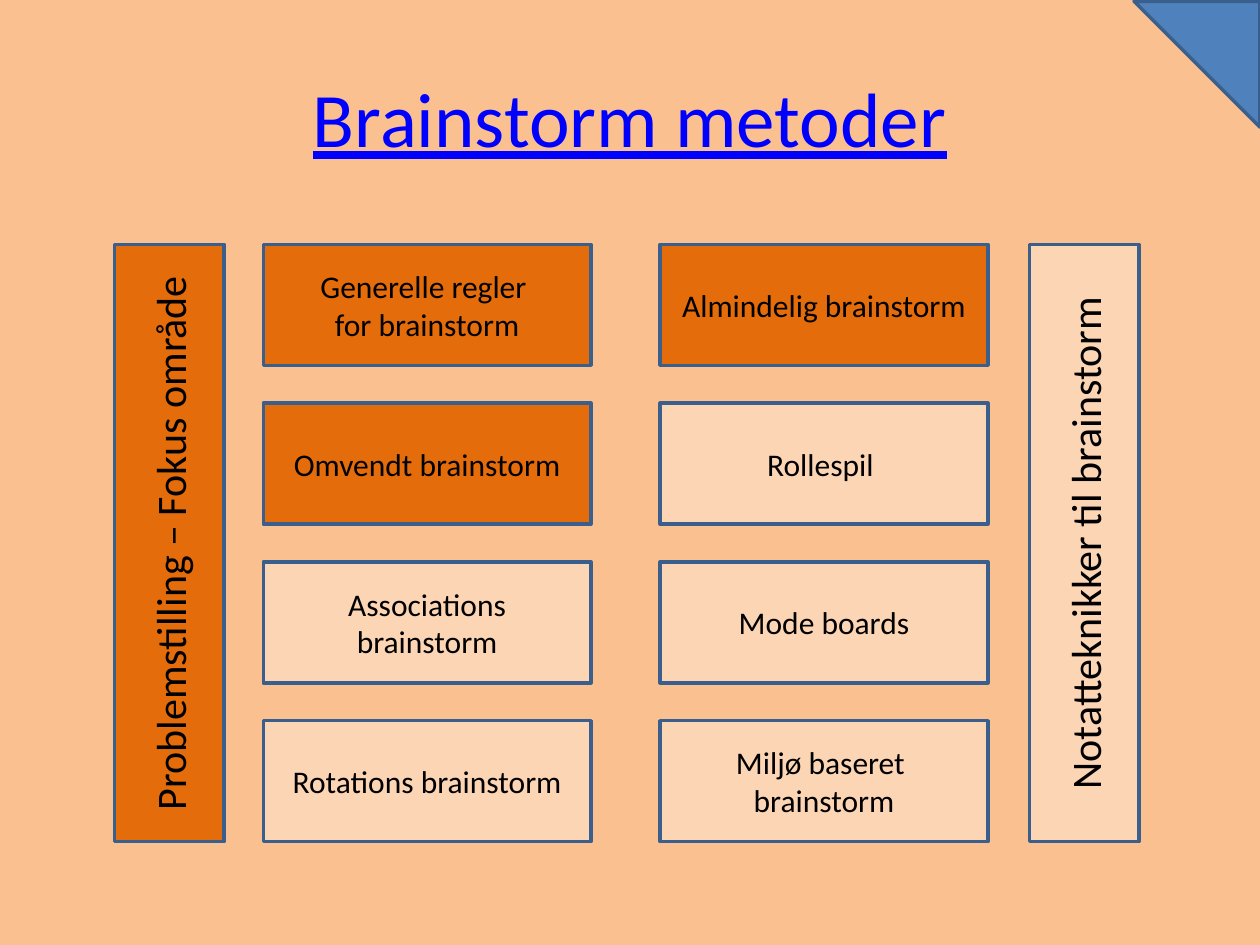
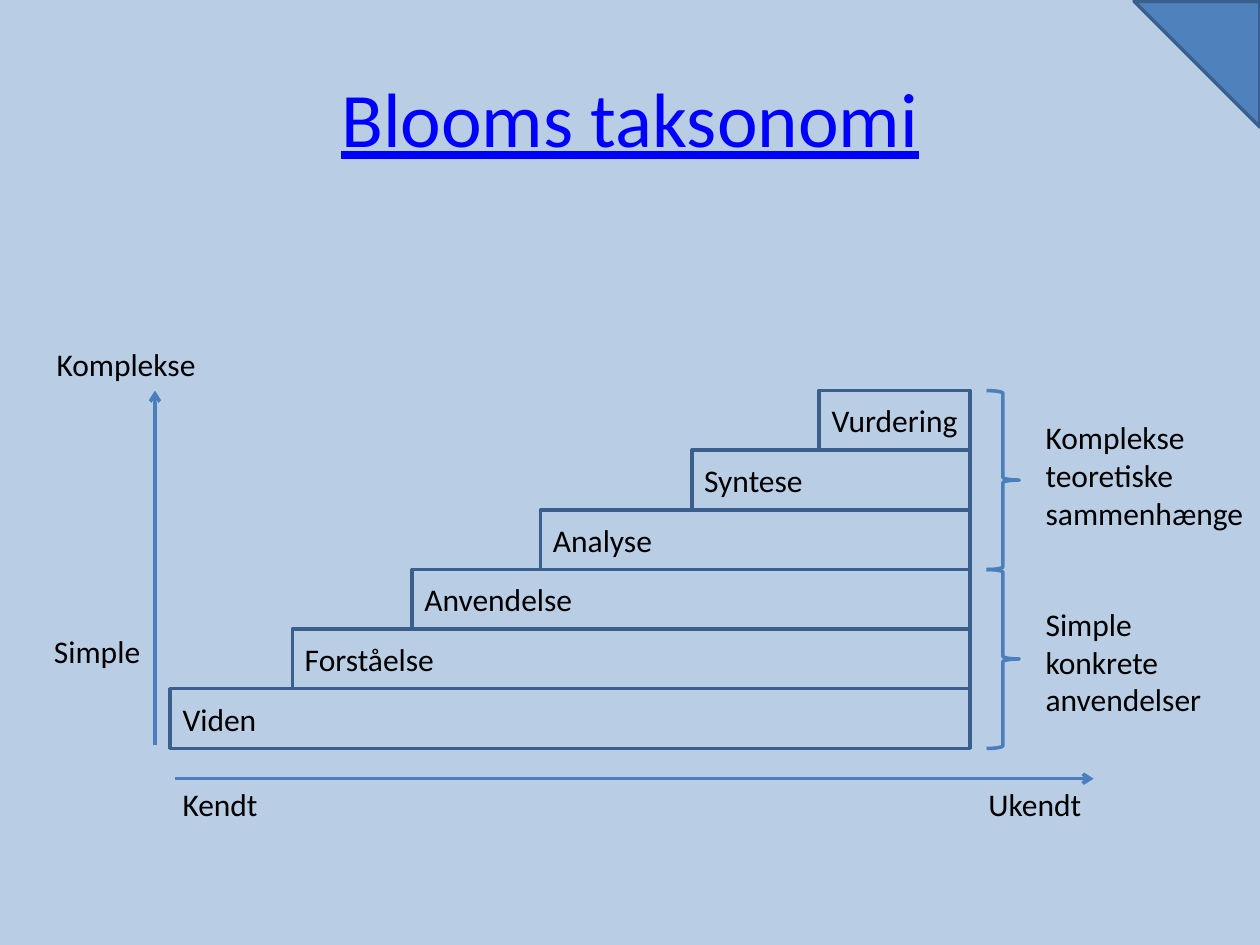
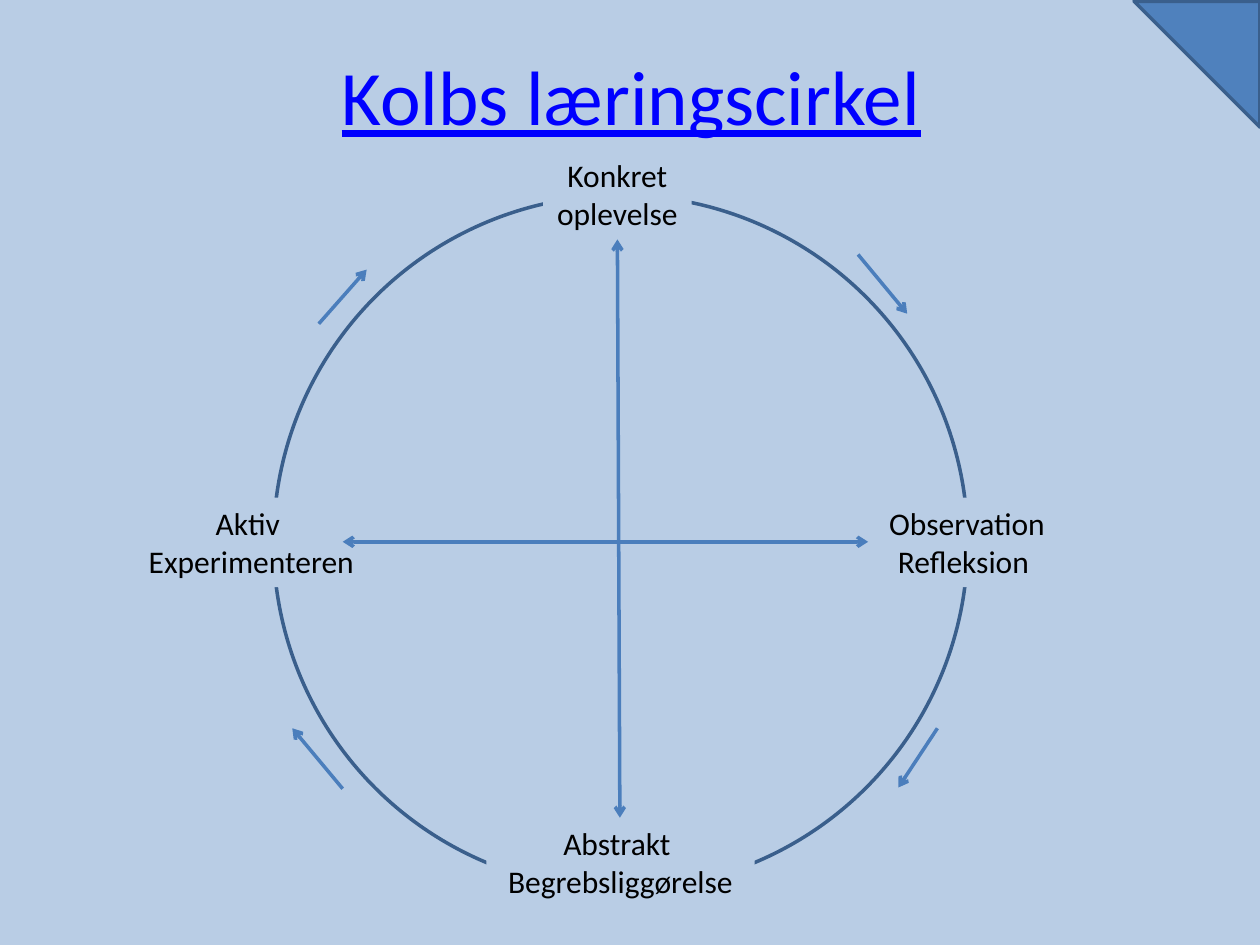
from dataclasses import dataclass

from lxml.etree import SubElement
from pptx import Presentation
from pptx.dml.color import RGBColor
from pptx.enum.shapes import MSO_CONNECTOR, MSO_SHAPE as Shape
from pptx.enum.text import MSO_ANCHOR as Anchor, MSO_AUTO_SIZE as AutoSize, PP_ALIGN as Align
from pptx.oxml.ns import qn
from pptx.util import Inches, Pt


@dataclass(frozen=True)
class Theme:
    font: str = "Calibri"
    title_size: int = 44
    banner_size: int = 24
    body_size: int = 18
    line_width: int = 2
    text: str = "000000"
    title: str = "0000FF"
    outline: str = "3A5F8C"
    arrow: str = "4B7EBC"
    corner: str = "4F81BD"
    peach: str = "FAC090"
    blue: str = "B9CDE5"
    strong_box: str = "E46C0A"
    pale_box: str = "FCD5B5"


THEME = Theme()


def write_text(frame, text, size=THEME.body_size, color=THEME.text, align=Align.CENTER,
               anchor=Anchor.MIDDLE, underline=None, wrap=True):
    """Fill the frame with one paragraph for each line of the text."""
    frame.word_wrap = wrap
    frame.vertical_anchor = anchor
    for index, line in enumerate(text.split("\n")):
        para = frame.paragraphs[0] if index == 0 else frame.add_paragraph()
        para.alignment = align
        span = para.add_run()
        span.text = line
        span.font.name = THEME.font
        span.font.size = Pt(size)
        span.font.underline = underline
        span.font.color.rgb = RGBColor.from_string(color)


def add_figure(page, kind, left, top, width, height, fill=None, line=THEME.outline):
    figure = page.shapes.add_shape(kind, Inches(left), Inches(top), Inches(width), Inches(height))
    figure.shadow.inherit = False
    if fill:
        figure.fill.solid()
        figure.fill.fore_color.rgb = RGBColor.from_string(fill)
    else:
        figure.fill.background()
    if line:
        figure.line.color.rgb = RGBColor.from_string(line)
        figure.line.width = Pt(THEME.line_width)
    else:
        figure.line.fill.background()
    return figure


def add_box(page, text, left, top, width, height, fill, line=THEME.outline, **text_format):
    box = add_figure(page, Shape.RECTANGLE, left, top, width, height, fill, line)
    write_text(box.text_frame, text, **text_format)
    return box


def add_banner(page, text, left, top, height, fill):
    """Add a tall box whose text reads upwards."""
    banner = add_box(page, text, left, top, 0.87, height, fill, size=THEME.banner_size)
    banner.element.txBody.bodyPr.set("vert", "vert270")


def add_label(page, text, left, top, width, height=0.4, align=Align.LEFT):
    label = page.shapes.add_textbox(Inches(left), Inches(top), Inches(width), Inches(height))
    write_text(label.text_frame, text, align=align, anchor=Anchor.TOP, wrap=False)
    label.text_frame.auto_size = AutoSize.SHAPE_TO_FIT_TEXT


def add_arrow(page, start, end, both_ends=False):
    points = [Inches(value) for value in (*start, *end)]
    arrow = page.shapes.add_connector(MSO_CONNECTOR.STRAIGHT, *points)
    arrow.line.color.rgb = RGBColor.from_string(THEME.arrow)
    arrow.line.width = Pt(THEME.line_width)
    properties = arrow.element.spPr
    outline = properties.find(qn("a:ln"))
    for tag in ("a:headEnd", "a:tailEnd") if both_ends else ("a:tailEnd",):
        SubElement(outline, qn(tag), type="arrow")
    SubElement(properties, qn("a:effectLst"))


def add_page(deck, title, background, title_left=0.5, title_top=0.3):
    """Add a slide with its background, title and corner triangle."""
    page = deck.slides.add_slide(deck.slide_layouts[5])
    page.background.fill.solid()
    page.background.fill.fore_color.rgb = RGBColor.from_string(background)
    heading = page.shapes.title
    heading.left, heading.top = Inches(title_left), Inches(title_top)
    heading.width, heading.height = Inches(9), Inches(1.25)
    write_text(heading.text_frame, title, size=THEME.title_size, color=THEME.title, underline=True)
    corner = add_figure(page, Shape.RIGHT_TRIANGLE, 9, 0.01, 1, 1, THEME.corner)
    corner.rotation = 180
    return page


def build_methods(deck):
    page = add_page(deck, "Brainstorm metoder", THEME.peach)
    top, box_height, row_pitch = 1.94, 0.96, 1.26
    strong, pale = THEME.strong_box, THEME.pale_box
    columns = {
        2.09: [("Generelle regler \nfor brainstorm", strong), ("Omvendt brainstorm", strong),
               ("Associations brainstorm", pale), ("Rotations brainstorm", pale)],
        5.24: [("Almindelig brainstorm", strong), ("Rollespil ", pale),
               ("Mode boards", pale), ("Miljø baseret \nbrainstorm", pale)],
    }
    for left, methods in columns.items():
        for row, (text, fill) in enumerate(methods):
            add_box(page, text, left, top + row * row_pitch, 2.6, box_height, fill)
    banner_height = 3 * row_pitch + box_height
    add_banner(page, "Problemstilling – Fokus område", 0.91, top, banner_height, strong)
    add_banner(page, "Notatteknikker til brainstorm", 8.17, top, banner_height, pale)


def build_taxonomy(deck):
    page = add_page(deck, "Blooms taksonomi", THEME.blue)
    top, bottom, right = 3.1, 5.94, 7.7
    levels = [("Viden", 1.35), ("Forståelse", 2.32), ("Anvendelse", 3.27),
              ("Analyse", 4.29), ("Syntese", 5.49), ("Vurdering", 6.5)]
    step = (bottom - top) / len(levels)
    for number, (text, left) in enumerate(levels, start=1):
        align = Align.CENTER if number == len(levels) else Align.LEFT
        add_box(page, text, left, bottom - number * step, right - left, step, THEME.blue,
                align=align)

    add_label(page, "Komplekse", 0.35, 2.69, 1.32)
    add_label(page, "Simple", 0.33, 4.97, 0.89)
    add_label(page, "Kendt", 1.35, 6.18, 0.81)
    add_label(page, "Ukendt", 7.73, 6.18, 0.95, align=Align.RIGHT)
    add_arrow(page, (1.23, 5.91), (1.23, top))
    add_arrow(page, (1.39, 6.18), (8.68, 6.18))

    brace_height = 3 * step
    groups = [("Komplekse\nteoretiske\nsammenhænge", 3.27, 1.79),
              ("Simple\nkonkrete\nanvendelser", 4.75, 1.45)]
    for index, (text, text_top, width) in enumerate(groups):
        add_figure(page, Shape.RIGHT_BRACE, 7.83, top + index * brace_height, 0.26, brace_height,
                   line=THEME.arrow)
        add_label(page, text, 8.2, text_top, width, 1.01)


def build_learning_circle(deck):
    page = add_page(deck, "Kolbs læringscirkel", THEME.blue, title_left=0.51, title_top=0.13)
    add_figure(page, Shape.OVAL, 2.17, 1.55, 5.51, 5.51)
    stages = [("Konkret oplevelse", 4.31, 1.19, 1.18),
              ("Observation Refleksion ", 6.89, 3.95, 1.57),
              ("Abstrakt \nBegrebsliggørelse", 3.86, 6.49, 2.13),
              ("Aktiv \nExperimenteren", 0.93, 3.95, 2.13)]
    for text, left, top, width in stages:
        add_box(page, text, left, top, width, 0.71, THEME.blue, line=None, anchor=Anchor.TOP)

    turns = [((2.53, 2.57), (2.91, 2.14)), ((6.81, 2.02), (7.2, 2.49)),
             ((7.44, 5.78), (7.13, 6.25)), ((2.72, 6.26), (2.32, 5.78))]
    for start, end in turns:
        add_arrow(page, start, end)
    add_arrow(page, (4.9, 1.9), (4.92, 6.49), both_ends=True)
    add_arrow(page, (2.72, 4.3), (6.89, 4.3), both_ends=True)


def main():
    deck = Presentation()
    deck.slide_width, deck.slide_height = Inches(10), Inches(7.5)
    build_methods(deck)
    build_taxonomy(deck)
    build_learning_circle(deck)
    deck.save("out.pptx")


if __name__ == "__main__":
    main()
